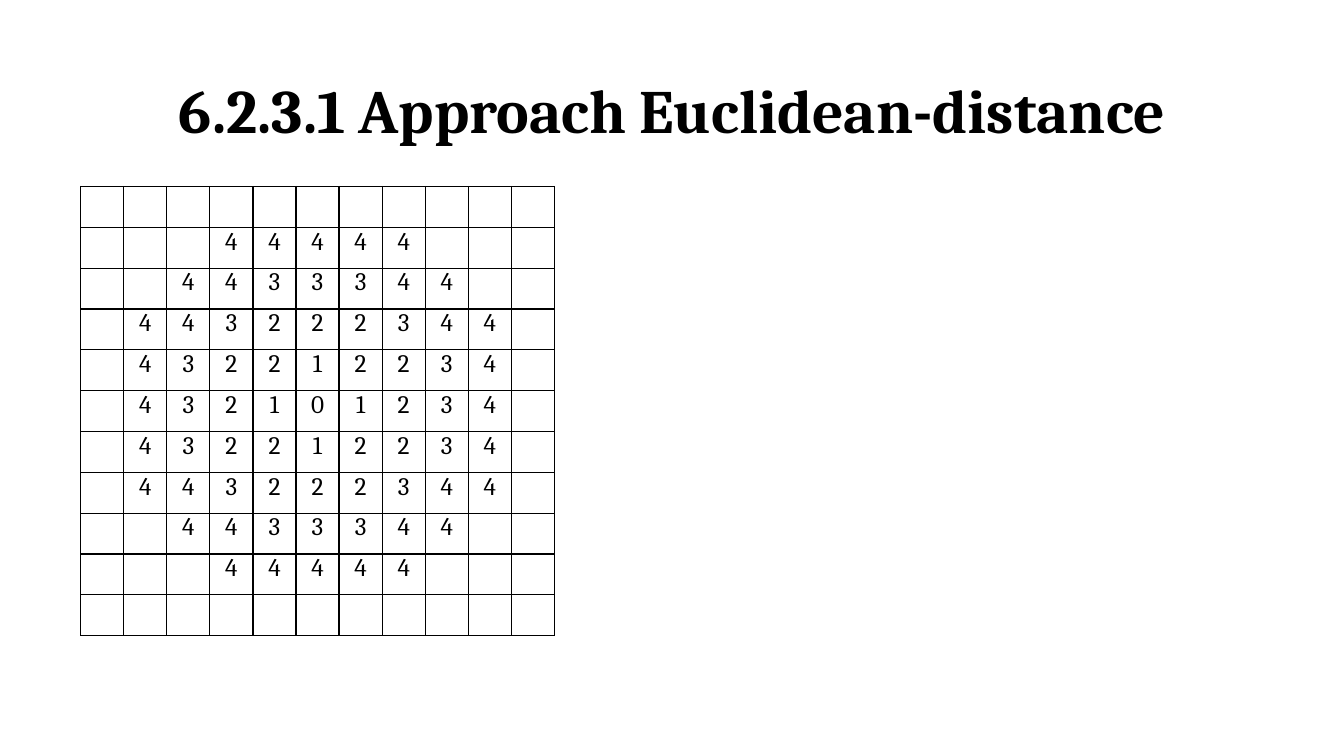
from dataclasses import dataclass

from lxml import etree
from pptx import Presentation
from pptx.dml.color import RGBColor
from pptx.enum.text import MSO_ANCHOR, PP_ALIGN
from pptx.oxml.ns import qn
from pptx.util import Inches, Pt

CENTER = PP_ALIGN.CENTER
MIDDLE = MSO_ANCHOR.MIDDLE
TOP = MSO_ANCHOR.TOP
TITLE_ONLY = 5

# Rounded distance of each grid cell from the centre; a dot is an empty cell.
DISTANCES = [
    "...........",
    "...44444...",
    "..4433344..",
    ".443222344.",
    ".432212234.",
    ".432101234.",
    ".432212234.",
    ".443222344.",
    "..4433344..",
    "...44444...",
    "...........",
]


@dataclass(frozen=True)
class Theme:
    font: str = "Cambria"
    ink: str = "000000"
    title_size: int = 44
    cell_size: int = 18
    border_width: int = 1


class SlideBuilder:
    def __init__(self, slide, theme):
        self.slide = slide
        self.theme = theme

    def format_runs(self, para, size, bold=False):
        for run in para.runs:
            run.font.name = self.theme.font
            run.font.size = Pt(size)
            run.font.bold = bold
            run.font.color.rgb = RGBColor.from_string(self.theme.ink)

    def title(self, text, left, top, width, height):
        box = self.slide.shapes.title
        box.left, box.top = Inches(left), Inches(top)
        box.width, box.height = Inches(width), Inches(height)
        frame = box.text_frame
        frame.text = text
        frame.word_wrap = True
        frame.vertical_anchor = MIDDLE
        para = frame.paragraphs[0]
        para.alignment = CENTER
        para.line_spacing = 0.9
        self.format_runs(para, self.theme.title_size, bold=True)

    def number_grid(self, rows, left, top, width, height):
        """Add a bordered table of equal cells, one character per cell."""
        table = self.slide.shapes.add_table(
            len(rows), len(rows[0]), Inches(left), Inches(top),
            Inches(width), Inches(height)).table
        table.first_row = False
        table.horz_banding = False
        for row_index, row in enumerate(rows):
            for column_index, value in enumerate(row):
                self.cell(table.cell(row_index, column_index), value.strip("."))

    def cell(self, cell, text):
        cell.margin_left = cell.margin_right = 0
        cell.margin_top = cell.margin_bottom = 0
        cell.vertical_anchor = TOP
        cell.text_frame.text = text
        para = cell.text_frame.paragraphs[0]
        para.alignment = CENTER
        self.format_runs(para, self.theme.cell_size)
        self.borders(cell)
        cell.fill.background()

    def borders(self, cell):
        properties = cell._tc.get_or_add_tcPr()
        for side in ("a:lnL", "a:lnR", "a:lnT", "a:lnB"):
            line = etree.SubElement(properties, qn(side),
                                    w=str(Pt(self.theme.border_width)))
            fill = etree.SubElement(line, qn("a:solidFill"))
            etree.SubElement(fill, qn("a:srgbClr"), val=self.theme.ink)


def main():
    deck = Presentation()
    deck.slide_width, deck.slide_height = Inches(13.33), Inches(7.5)
    slide = deck.slides.add_slide(deck.slide_layouts[TITLE_ONLY])
    builder = SlideBuilder(slide, Theme())
    builder.title("6.2.3.1 Approach Euclidean-distance", 0.92, 0.4, 11.5, 1.45)
    builder.number_grid(DISTANCES, 0.8, 1.85, 4.7, 4.46)
    deck.save("out.pptx")


if __name__ == "__main__":
    main()
